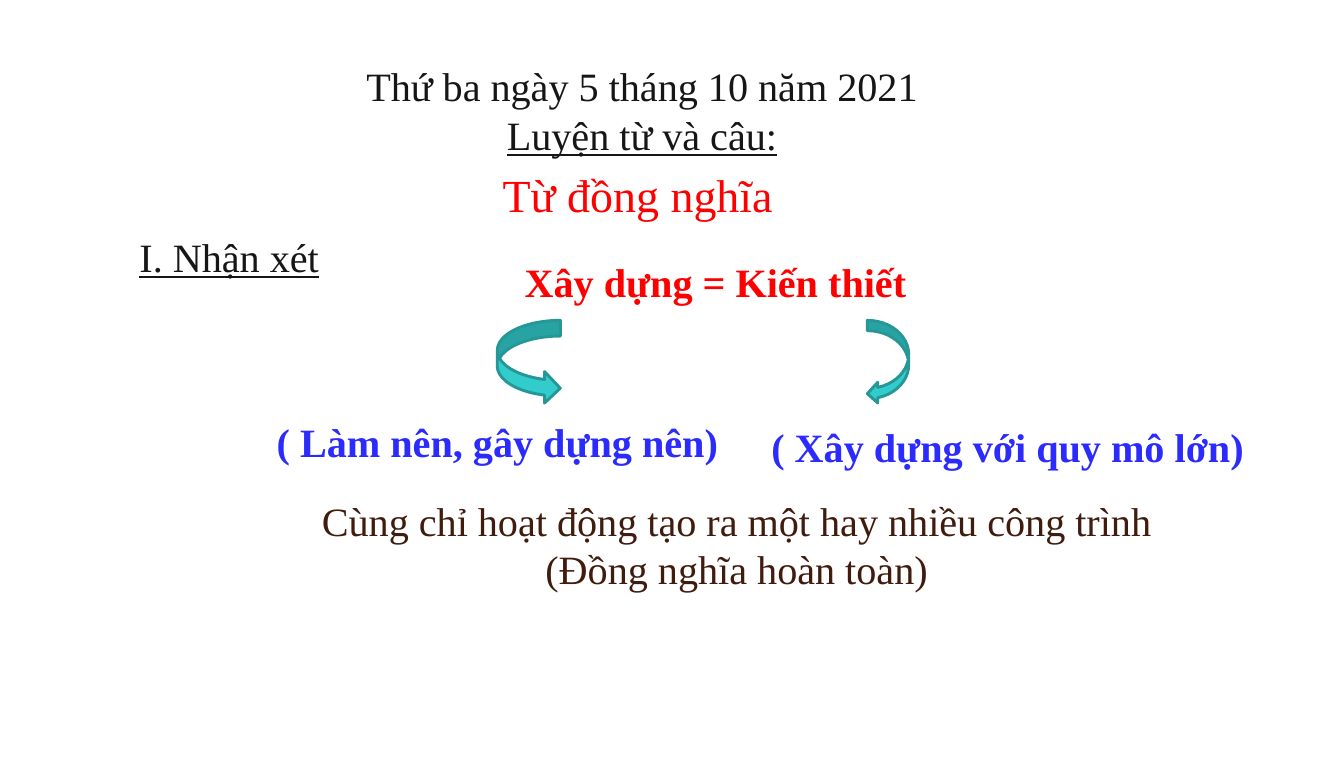
from pptx import Presentation
from pptx.dml.color import RGBColor
from pptx.enum.shapes import MSO_SHAPE
from pptx.enum.text import MSO_ANCHOR, MSO_AUTO_SIZE, PP_ALIGN
from pptx.util import Pt

FONT = "Times New Roman"
COLORS = {
    "ink": "161616",
    "red": "FF0000",
    "blue": "2B2BFE",
    "brown": "401C0E",
    "teal": "33CCCC",
    "teal_edge": "269797",
}

# Content: places are left, top, width, height in points
DATE = "Thứ ba ngày 5 tháng 10 năm 2021"
SUBJECT = "Luyện từ và câu:"
HEADING_PLACE = (90, 5.76, 714.24, 174.24)
LEFT, CENTER = PP_ALIGN.LEFT, PP_ALIGN.CENTER

# text, place, size, colour, bold, underline, alignment
LESSON_TEXTS = [
    ("Xây dựng = Kiến thiết", (315.36, 175.68, 365.76, 41.04),
     28, "red", True, False, CENTER),
    ("( Làm nên, gây dựng nên)", (164.88, 287.28, 362.88, 41.04),
     28, "blue", True, False, CENTER),
    ("( Xây dựng với quy mô lớn)", (512.64, 290.88, 378, 41.04),
     28, "blue", True, False, CENTER),
    ("Cùng chỉ hoạt động tạo ra một hay nhiều công trình\v(Đồng nghĩa hoàn toàn)",
     (92.88, 342, 840.24, 74.88), 28, "brown", False, False, CENTER),
    ("I. Nhận xét", (90, 158.4, 452.88, 41.04),
     28, "ink", False, True, LEFT),
    ("Từ đồng nghĩa", (282.24, 112.32, 324, 46.08),
     32, "red", False, False, CENTER),
]
MEANING_ARROWS = [
    (MSO_SHAPE.CURVED_RIGHT_ARROW, (346.32, 223.2, 43.92, 58.32)),
    (MSO_SHAPE.CURVED_LEFT_ARROW, (604.08, 223.2, 28.8, 58.32)),
]


def color(name):
    return RGBColor.from_string(COLORS[name])


def points(place):
    return [Pt(value) for value in place]


def style(paragraph, size, color_name, bold, alignment):
    paragraph.alignment = alignment
    font = paragraph.font
    font.name, font.size, font.bold = FONT, Pt(size), bold
    font.color.rgb = color(color_name)


prs = Presentation()
prs.slide_width, prs.slide_height = Pt(936), Pt(540)
slide = prs.slides.add_slide(prs.slide_layouts[5])

# Date and subject heading
heading = slide.shapes.title
heading.left, heading.top, heading.width, heading.height = points(HEADING_PLACE)
heading_frame = heading.text_frame
heading_frame.word_wrap = True
heading_frame.auto_size = MSO_AUTO_SIZE.NONE
heading_frame.vertical_anchor = MSO_ANCHOR.MIDDLE
heading_frame.margin_bottom = Pt(36)  # lifts the two lines above the lesson name
date_line = heading_frame.paragraphs[0]
date_line.add_run().text = DATE
date_line.add_line_break()
subject = date_line.add_run()
subject.text = SUBJECT
subject.font.underline = True
style(date_line, 28, "ink", False, CENTER)

# Curved arrows from each word to its meaning
for preset, place in MEANING_ARROWS:
    arrow = slide.shapes.add_shape(preset, *points(place))
    arrow.shadow.inherit = False
    arrow.fill.solid()
    arrow.fill.fore_color.rgb = color("teal")
    arrow.line.color.rgb = color("teal_edge")
    arrow.line.width = Pt(2)

# Lesson name, words, meanings and conclusion
for text, place, size, color_name, bold, underline, alignment in LESSON_TEXTS:
    frame = slide.shapes.add_textbox(*points(place)).text_frame
    frame.word_wrap = True
    frame.auto_size = MSO_AUTO_SIZE.SHAPE_TO_FIT_TEXT
    line = frame.paragraphs[0]
    line.text = text
    style(line, size, color_name, bold, alignment)
    line.font.underline = underline

prs.save("out.pptx")
